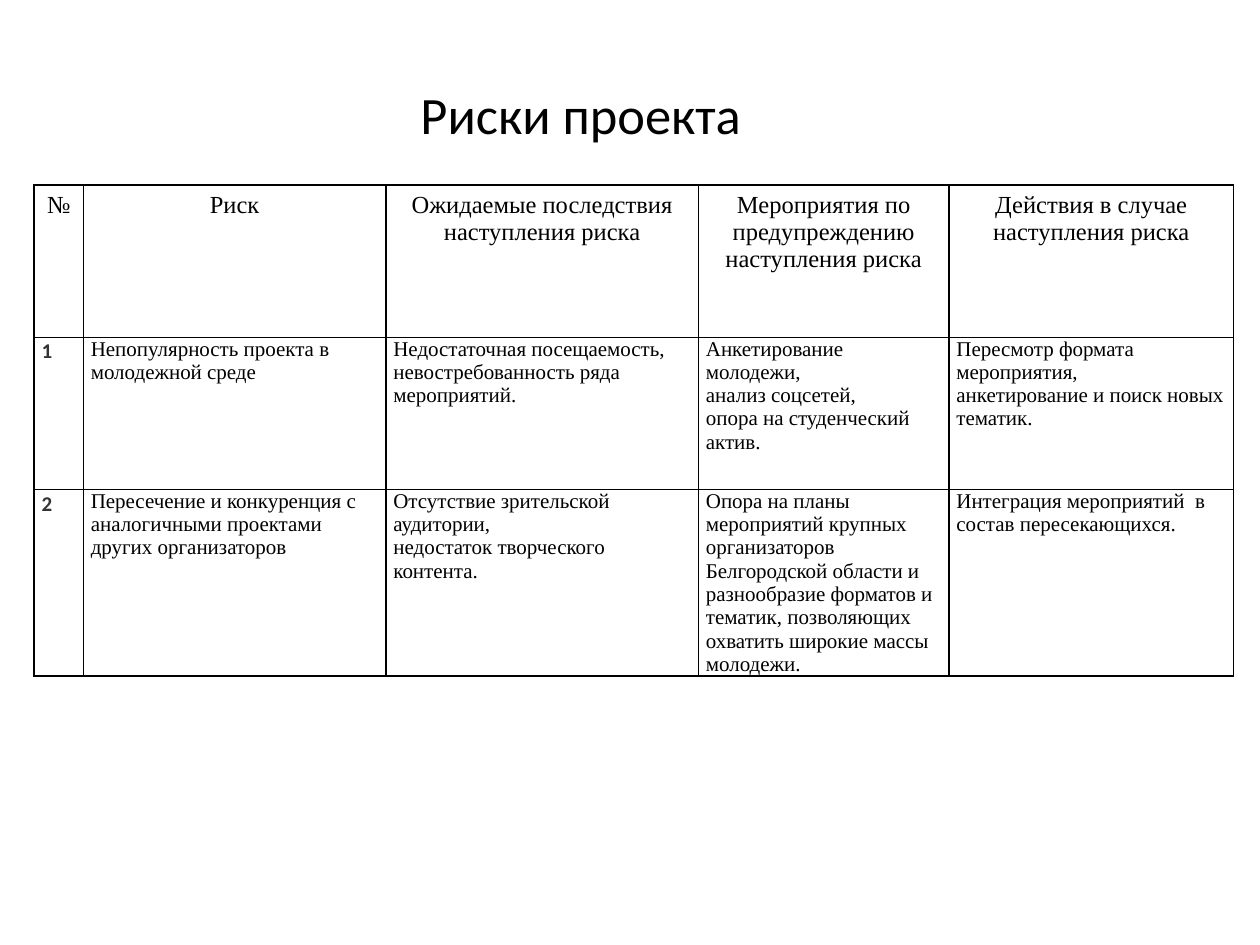
import lxml.etree
import pptx
import pptx.dml.color
import pptx.enum.text
import pptx.oxml.ns
import pptx.util

Cm = pptx.util.Cm
ALIGN = pptx.enum.text.PP_ALIGN
ANCHOR = pptx.enum.text.MSO_ANCHOR
SERIF = "Times New Roman"
COLUMN_WIDTHS = (0.99, 6.1, 6.3, 5.05, 5.74)
ROW_HEIGHTS = (3.07, 3.07, 2.31)
HEADINGS = (
    "№",
    "Риск",
    "Ожидаемые последствия наступления риска",
    "Мероприятия по предупреждению наступления риска",
    "Действия в случае наступления риска",
)
RISKS = (
    (
        "1",
        "Непопулярность проекта в молодежной среде",
        "Недостаточная посещаемость, невостребованность ряда мероприятий.",
        "Анкетирование молодежи,\nанализ соцсетей,\nопора на студенческий актив.",
        "Пересмотр формата мероприятия,\nанкетирование и поиск новых тематик.",
    ),
    (
        "2",
        "Пересечение и конкуренция с аналогичными проектами других организаторов",
        "Отсутствие зрительской аудитории,\nнедостаток творческого контента.",
        "Опора на планы мероприятий крупных организаторов Белгородской области "
        "и разнообразие форматов и тематик, позволяющих охватить широкие массы молодежи.",
        "Интеграция мероприятий  в состав пересекающихся.",
    ),
)


def make_color(value):
    """Turn a hex string into a colour."""
    return pptx.dml.color.RGBColor.from_string(value)


def write_text(frame, text, font=SERIF, size=12, color="000000", bold=False, align=ALIGN.LEFT):
    """Write each line of the text as a formatted paragraph."""
    for index, line in enumerate(text.split("\n")):
        para = frame.add_paragraph() if index else frame.paragraphs[0]
        para.alignment = align
        span = para.add_run()
        span.text = line
        span.font.name = font
        span.font.size = pptx.util.Pt(size)
        span.font.bold = bold
        span.font.color.rgb = make_color(color)


def draw_borders(cell, color="000000", points=1):
    """Give a cell the same line on all four sides."""
    properties = cell._tc.get_or_add_tcPr()
    qualify = pptx.oxml.ns.qn
    for side in ("lnL", "lnR", "lnT", "lnB"):
        line = lxml.etree.SubElement(properties, qualify(f"a:{side}"), w=str(pptx.util.Pt(points)))
        fill = lxml.etree.SubElement(line, qualify("a:solidFill"))
        lxml.etree.SubElement(fill, qualify("a:srgbClr"), val=color)


def fill_cell(cell, text, side=0.15, top=0, bottom=0, **text_format):
    """Set the margins, borders and text of a table cell."""
    cell.margin_left = cell.margin_right = Cm(side)
    cell.margin_top, cell.margin_bottom = Cm(top), Cm(bottom)
    draw_borders(cell)
    cell.fill.background()
    write_text(cell.text_frame, text, **text_format)


def add_title(page, text):
    """Place and format the slide title."""
    box = page.shapes.title
    box.left, box.top, box.width, box.height = Cm(0.28), Cm(1.52), Cm(22.86), Cm(1.55)
    box.text_frame.vertical_anchor = ANCHOR.MIDDLE
    write_text(box.text_frame, text, font="Calibri", size=30, align=ALIGN.CENTER)


def add_risk_table(page):
    """Add the table of risks with its heading row."""
    table = page.shapes.add_table(
        len(ROW_HEIGHTS), len(COLUMN_WIDTHS), Cm(0.69), Cm(3.73),
        Cm(sum(COLUMN_WIDTHS)), Cm(sum(ROW_HEIGHTS)),
    ).table
    table.horz_banding = False
    table.first_row = False
    for column, width in zip(table.columns, COLUMN_WIDTHS):
        column.width = Cm(width)
    for row, height in zip(table.rows, ROW_HEIGHTS):
        row.height = Cm(height)
    for index, heading in enumerate(HEADINGS):
        fill_cell(table.cell(0, index), heading, side=0.2, top=0.13, bottom=0.13,
                  size=14, align=ALIGN.CENTER)
    for row_index, (number, *details) in enumerate(RISKS, start=1):
        fill_cell(table.cell(row_index, 0), number, top=0.03,
                  font="Calibri", color="333333", bold=True)
        for index, detail in enumerate(details, start=1):
            fill_cell(table.cell(row_index, index), detail)


def main():
    """Build the slide on project risks."""
    deck = pptx.Presentation()
    deck.slide_width, deck.slide_height = Cm(25.4), Cm(19.05)
    page = deck.slides.add_slide(deck.slide_layouts.get_by_name("Title Only"))
    add_title(page, "Риски проекта")
    add_risk_table(page)
    deck.save("out.pptx")


if __name__ == "__main__":
    main()
